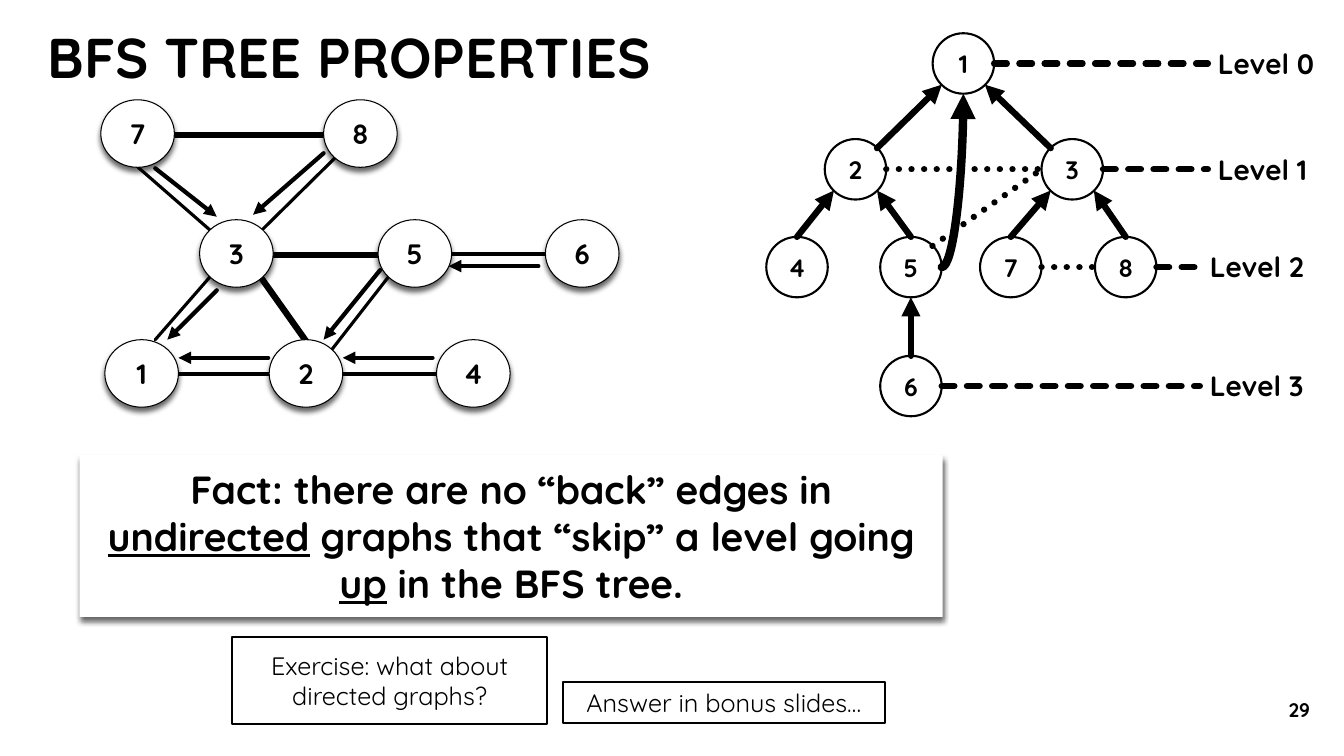
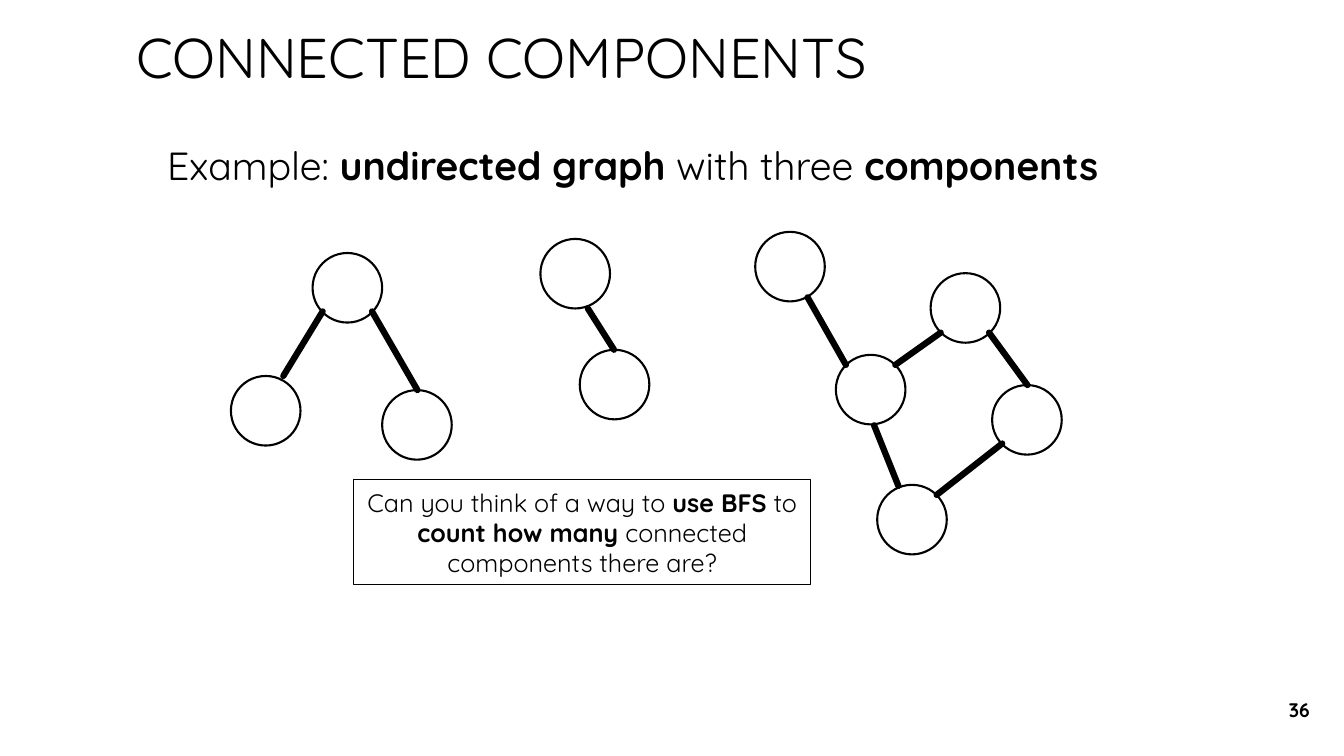
import lxml.etree
import pptx
import pptx.dml.color
import pptx.enum.dml
import pptx.enum.shapes
import pptx.enum.text
import pptx.oxml.ns
import pptx.util

PX = 9144
FONT = "Quicksand"
BLACK = "000000"
WHITE = "FFFFFF"
ALIGN = pptx.enum.text.PP_ALIGN
ANCHOR = pptx.enum.text.MSO_ANCHOR
DASH = pptx.enum.dml.MSO_LINE
SHAPE = pptx.enum.shapes.MSO_SHAPE
CONNECTOR = pptx.enum.shapes.MSO_CONNECTOR
SITES = {
    "t": (0.5, 0), "b": (0.5, 1), "l": (0, 0.5), "r": (1, 0.5),
    "tl": (0.15, 0.15), "tr": (0.85, 0.15), "bl": (0.15, 0.85), "br": (0.85, 0.85),
}


def emu(*lengths):
    return [pptx.util.Emu(round(length * PX)) for length in lengths]


def color(value):
    return pptx.dml.color.RGBColor.from_string(value)


def add_child(parent, tag, **attributes):
    child = lxml.etree.SubElement(parent, pptx.oxml.ns.qn(tag))
    for key, value in attributes.items():
        child.set(key, str(value))
    return child


def write(frame, runs, size, bold=False, align=ALIGN.CENTER, anchor=ANCHOR.MIDDLE, wrap=True):
    frame.word_wrap = wrap
    frame.vertical_anchor = anchor
    paragraph = frame.paragraphs[0]
    paragraph.alignment = align
    paragraph.font.name = FONT
    paragraph.font.size = pptx.util.Pt(size)
    paragraph.font.bold = bold
    paragraph.font.color.rgb = color(BLACK)
    for text, style in runs:
        run = paragraph.add_run()
        run.text = text
        if style == "bold":
            run.font.bold = True
        elif style == "underline":
            run.font.underline = True


def add_text(slide, box, runs, size, **options):
    label = slide.shapes.add_textbox(*emu(*box))
    write(label.text_frame, runs, size, **options)


def add_shape(slide, kind, box, line=None, shadow=False):
    shape = slide.shapes.add_shape(kind, *emu(*box))
    shape.fill.solid()
    shape.fill.fore_color.rgb = color(WHITE)
    if line:
        shape.line.color.rgb = color(BLACK)
        shape.line.width = pptx.util.Pt(line)
    else:
        shape.line.fill.background()
    shape.shadow.inherit = False
    if shadow:
        effects = shape._element.spPr.find(pptx.oxml.ns.qn("a:effectLst"))
        outer = add_child(effects, "a:outerShdw", blurRad=pptx.util.Pt(4), dist=pptx.util.Pt(3),
                          dir=5400000, rotWithShape=0)
        add_child(add_child(outer, "a:srgbClr", val=BLACK), "a:alpha", val=60000)
    return shape


def add_panel(slide, box, runs, size=18, line=None, bold=False, shadow=False):
    panel = add_shape(slide, SHAPE.RECTANGLE, box, line, shadow)
    write(panel.text_frame, runs, size, bold=bold)


def add_node(slide, box, text="", size=18, line=1.5, shadow=False):
    node = add_shape(slide, SHAPE.OVAL, box, line, shadow)
    if text:
        frame = node.text_frame
        frame.margin_left = frame.margin_right = frame.margin_top = frame.margin_bottom = 0
        write(frame, [(text, "")], size, bold=True)


def add_edge(slide, start, end, width=4.5, dash=None, arrow=False, curved=False):
    kind = CONNECTOR.CURVE if curved else CONNECTOR.STRAIGHT
    edge = slide.shapes.add_connector(kind, *emu(*start, *end))
    edge.line.color.rgb = color(BLACK)
    edge.line.width = pptx.util.Pt(width)
    if dash:
        edge.line.dash_style = dash
    properties = edge._element.spPr
    if curved:
        properties.find(pptx.oxml.ns.qn("a:prstGeom")).set("prst", "curvedConnector2")
    outline = edge.line._get_or_add_ln()
    outline.set("cap", "rnd")
    if arrow:
        add_child(outline, "a:tailEnd", type="triangle")
    add_child(properties, "a:effectLst")


def add_edges(slide, left, top, edges, **options):
    for x1, y1, x2, y2 in edges:
        add_edge(slide, (left + x1, top + y1), (left + x2, top + y2), **options)


def add_titled_slide(deck, title, box, number, bold=False):
    slide = deck.slides.add_slide(deck.slide_layouts[5])
    heading = slide.shapes.title
    heading.left, heading.top, heading.width, heading.height = emu(*box)
    write(heading.text_frame, [(title, "")], 40, bold=bold, align=ALIGN.LEFT)
    add_text(slide, (1249, 684, 60, 40), [(number, "")], 14, bold=True, align=ALIGN.RIGHT)
    return slide


def draw_search_graph(slide, left, top):
    width, height, row_step = 73, 67, 119
    rows = [
        {"7": 0, "8": 221},
        {"3": 98, "5": 275, "6": 441},
        {"1": 4, "2": 167, "4": 333},
    ]
    tree_edges = [
        (108, 129, 37, 67), (160, 129, 232, 58), (108, 176, 54, 238), (240, 272, 333, 272),
        (348, 153, 441, 153), (285, 176, 229, 248), (167, 272, 77, 272),
    ]
    other_edges = [(73, 35, 221, 35), (160, 178, 204, 240), (170, 154, 275, 154)]
    parent_arrows = [
        (166, 256, 77, 256), (115, 189, 66, 238), (329, 256, 240, 256), (277, 169, 221, 238),
        (54, 68, 115, 116), (221, 53, 151, 114), (434, 165, 345, 165),
    ]
    add_edges(slide, left, top, tree_edges, width=2.25)
    add_edges(slide, left, top, other_edges)
    add_edges(slide, left, top, parent_arrows, width=3, arrow=True)
    for row, nodes in enumerate(rows):
        for name, x in nodes.items():
            box = (left + x, top + row * row_step, width, height)
            add_node(slide, box, name, size=20, line=0.75, shadow=True)


def draw_bfs_tree(slide, left, top):
    width, height = 61, 60
    nodes = {
        "1": (165, 0), "2": (58, 105), "3": (273, 105), "4": (0, 202),
        "5": (113, 202), "7": (212, 202), "8": (326, 202), "6": (113, 320),
    }
    parent_links = [
        ("3", "tl", "1", "br"), ("2", "tr", "1", "bl"), ("4", "t", "2", "bl"), ("5", "t", "2", "br"),
        ("7", "t", "3", "bl"), ("8", "t", "3", "br"), ("6", "t", "5", "b"),
    ]
    other_links = [("5", "tr", "3", "l"), ("2", "r", "3", "l"), ("7", "r", "8", "l")]
    levels = [("1", 438), ("3", 438), ("8", 430), ("6", 430)]

    def site(name, side):
        x, y = nodes[name]
        across, down = SITES[side]
        return left + x + across * width, top + y + down * height

    for name, (x, y) in nodes.items():
        add_node(slide, (left + x, top + y, width, height), name)
    for child, child_side, parent, parent_side in parent_links:
        add_edge(slide, site(child, child_side), site(parent, parent_side), arrow=True)
    for first, first_side, second, second_side in other_links:
        add_edge(slide, site(first, first_side), site(second, second_side), dash=DASH.ROUND_DOT)
    for level, (name, label_x) in enumerate(levels):
        start = site(name, "r")
        add_edge(slide, start, (left + label_x, start[1]), dash=DASH.SQUARE_DOT)
        add_text(slide, (left + label_x, start[1] - 22, 118, 44), [(f"Level {level}", "")], 20,
                 bold=True, align=ALIGN.LEFT, anchor=ANCHOR.TOP, wrap=False)
    add_edge(slide, site("5", "r"), site("1", "b"), width=6, arrow=True, curved=True)


def draw_components(slide, left, top):
    diameter = 69
    nodes = [
        (81, 21), (0, 143), (150, 157), (307, 7), (346, 117),
        (520, 0), (600, 122), (694, 41), (755, 152), (641, 251),
    ]
    edges = [
        (91, 79, 52, 143), (140, 79, 185, 157), (354, 76, 380, 117), (572, 65, 610, 132),
        (704, 100, 659, 132), (752, 100, 790, 152), (765, 210, 700, 261), (662, 252, 638, 192),
    ]
    for x, y in nodes:
        add_node(slide, (left + x, top + y, diameter, diameter))
    add_edges(slide, left, top, edges)


def build_tree_properties(deck):
    slide = add_titled_slide(deck, "BFS TREE PROPERTIES", (37, 0, 1172, 112), "29", bold=True)
    draw_bfs_tree(slide, 760, 33)
    draw_search_graph(slide, 100, 99)
    fact = [
        ("Fact: there are no “back” edges in ", ""), ("undirected", "underline"),
        (" graphs that “skip” a level going ", ""), ("up", "underline"), (" in the BFS tree.", ""),
    ]
    add_panel(slide, (79, 451, 856, 161), fact, size=28, bold=True, shadow=True)
    add_panel(slide, (558, 677, 320, 40), [("Answer in bonus slides…", "")], line=1.5)
    add_panel(slide, (230, 632, 313, 86), [("Exercise: what about directed graphs?", "")], line=1.5)


def build_connected_components(deck):
    slide = add_titled_slide(deck, "CONNECTED COMPONENTS", (125, 0, 1083, 112), "36")
    example = [
        ("Example: ", ""), ("undirected graph", "bold"), (" with three", ""), (" components", "bold"),
    ]
    add_text(slide, (156, 135, 1052, 60), example, 28, align=ALIGN.LEFT, anchor=ANCHOR.TOP)
    draw_components(slide, 229, 230)
    question = [
        ("Can you think of a way to ", ""), ("use BFS", "bold"), (" to ", ""),
        ("count how many ", "bold"), ("connected components there are?", ""),
    ]
    add_panel(slide, (351, 476, 453, 104), question, line=0.75)


def main():
    deck = pptx.Presentation()
    deck.slide_width, deck.slide_height = emu(1333, 750)
    build_tree_properties(deck)
    build_connected_components(deck)
    deck.save("out.pptx")


if __name__ == "__main__":
    main()
